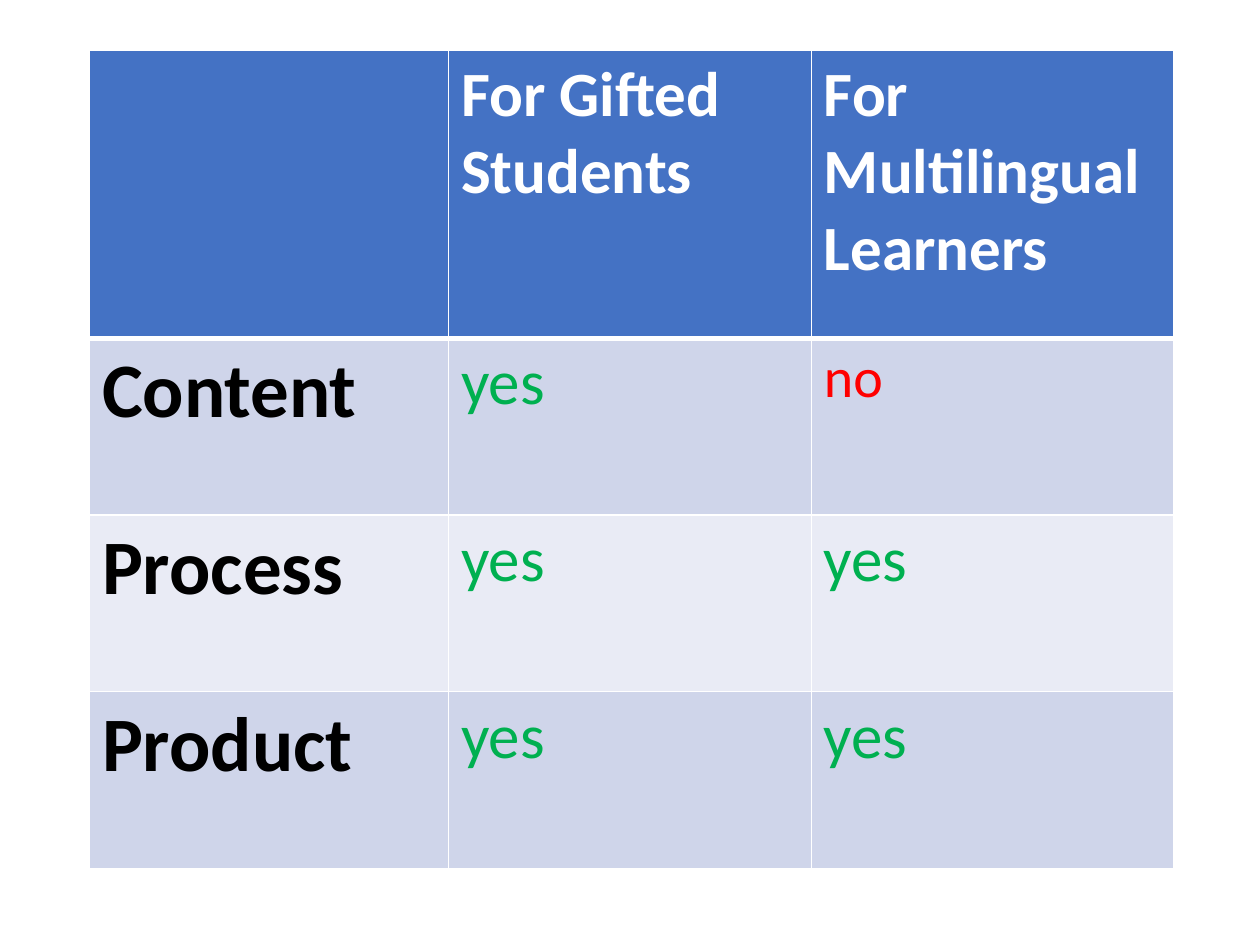
"""Build a slide comparing differentiation for gifted students and multilingual learners."""
from dataclasses import dataclass

import pptx
import pptx.dml.color
import pptx.oxml
import pptx.oxml.ns
import pptx.table
import pptx.util

HUES = {
    "head": "4472C4", "odd": "CFD5EA", "even": "E9EBF5", "line": "FFFFFF",
    "white": "FFFFFF", "black": "000000", "yes": "00B050", "no": "FF0000",
}
WIDE, HIGH = 10, 7.5
COLS = [0.285, 0.288, 0.288]
ROWS = [0.305, 0.187, 0.187, 0.187]
LEFT, TOP = 0.071, 0.053


@dataclass
class Item:
    text: str
    size: int
    hue: str
    bold: bool = False


def head(text: str) -> Item:
    return Item(text, 36, "white", True)


def label(text: str) -> Item:
    return Item(text, 44, "black", True)


YES = Item("yes", 36, "yes")
NO = Item("no", 32, "no")
GRID = [
    [head(""), head("For Gifted Students"), head("For Multilingual Learners")],
    [label("Content"), YES, NO],
    [label("Process"), YES, YES],
    [label("Product"), YES, YES],
]


def paint(hue: str) -> pptx.dml.color.RGBColor:
    return pptx.dml.color.RGBColor.from_string(HUES[hue])


def edge(cell: pptx.table._Cell, row: int) -> None:
    wide = {"L": 1, "R": 1, "T": 3 if row == 1 else 1, "B": 3 if row == 0 else 1}
    props = cell._tc.get_or_add_tcPr()
    for spot, (side, size) in enumerate(wide.items()):
        line = pptx.oxml.parse_xml(
            f'<a:ln{side} {pptx.oxml.ns.nsdecls("a")} w="{pptx.util.Pt(size)}">'
            f'<a:solidFill><a:srgbClr val="{HUES["line"]}"/></a:solidFill></a:ln{side}>'
        )
        props.insert(spot, line)


def fill(cell: pptx.table._Cell, item: Item, row: int) -> None:
    cell.fill.solid()
    cell.fill.fore_color.rgb = paint("head" if row == 0 else "odd" if row % 2 else "even")
    edge(cell, row)
    if item.text:
        run = cell.text_frame.paragraphs[0].add_run()
        run.text = item.text
        run.font.name = "Calibri"
        run.font.size = pptx.util.Pt(item.size)
        run.font.bold = item.bold
        run.font.color.rgb = paint(item.hue)


def main() -> None:
    deck = pptx.Presentation()
    deck.slide_width = pptx.util.Inches(WIDE)
    deck.slide_height = pptx.util.Inches(HIGH)
    slide = deck.slides.add_slide(deck.slide_layouts[6])
    table = slide.shapes.add_table(
        len(ROWS), len(COLS),
        pptx.util.Inches(LEFT * WIDE), pptx.util.Inches(TOP * HIGH),
        pptx.util.Inches(sum(COLS) * WIDE), pptx.util.Inches(sum(ROWS) * HIGH),
    ).table
    for col, share in zip(table.columns, COLS):
        col.width = pptx.util.Inches(share * WIDE)
    for row, share in zip(table.rows, ROWS):
        row.height = pptx.util.Inches(share * HIGH)
    for row, items in enumerate(GRID):
        for col, item in enumerate(items):
            fill(table.cell(row, col), item, row)
    deck.save("out.pptx")


if __name__ == "__main__":
    main()
